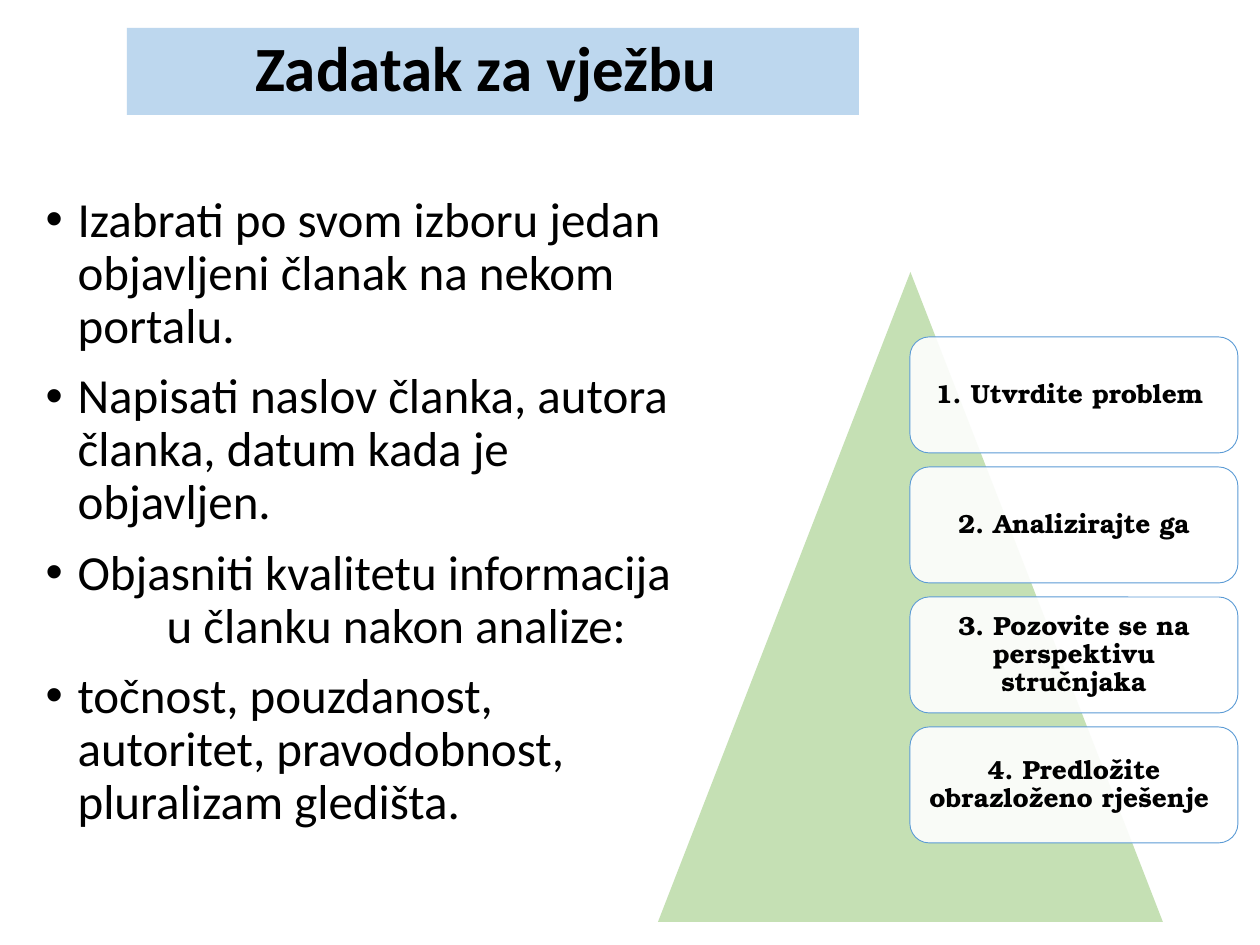
import lxml.etree
import pptx
import pptx.dml.color
import pptx.enum.shapes
import pptx.enum.text
import pptx.oxml
import pptx.oxml.ns
import pptx.util

RGBColor = pptx.dml.color.RGBColor
Shapes = pptx.enum.shapes.MSO_SHAPE
Align = pptx.enum.text.PP_ALIGN
Anchor = pptx.enum.text.MSO_ANCHOR
qn = pptx.oxml.ns.qn

BLACK = RGBColor(0x00, 0x00, 0x00)
WHITE = RGBColor(0xFF, 0xFF, 0xFF)
PALE_BLUE = RGBColor(0xBD, 0xD7, 0xEE)
BLUE = RGBColor(0x5B, 0x9B, 0xD5)
GREEN = RGBColor(0xC5, 0xE0, 0xB4)

TASKS = [
    "Izabrati po svom izboru jedan objavljeni članak na nekom portalu.",
    "Napisati naslov članka, autora članka, datum kada je objavljen.",
    "Objasniti kvalitetu informacija\v\tu članku nakon analize:",
    "točnost, pouzdanost, autoritet, pravodobnost, pluralizam gledišta.",
]
STEPS = [
    "1. Utvrdite problem ",
    "2. Analizirajte ga",
    "3. Pozovite se na perspektivu stručnjaka",
    "4. Predložite obrazloženo rješenje ",
]


def px(length):
    """Turn whole px into EMU."""
    return pptx.util.Emu(round(length * 914400 / 126))


def assign(target, values):
    """Set attributes of an object from a dict."""
    for name, value in values.items():
        setattr(target, name, value)


class SlideBuilder:
    """Hold the text styles and the current slide."""

    title_font = {"name": "Calibri", "size": pptx.util.Pt(36), "bold": True}
    body_font = {"name": "Calibri", "size": pptx.util.Pt(28), "bold": False}
    step_font = {"name": "TeX Gyre Bonum", "size": pptx.util.Pt(15), "bold": True}
    centred = {"alignment": Align.CENTER, "line_spacing": 0.9}
    listed = {"alignment": Align.LEFT, "line_spacing": 0.9}

    def __init__(self, slide):
        self.slide = slide

    def place(self, shape, left, top, width, height):
        """Move and size a shape in px."""
        assign(shape, {"left": px(left), "top": px(top),
                       "width": px(width), "height": px(height)})

    def format(self, paragraph, layout, font):
        """Format a paragraph and its runs."""
        assign(paragraph, layout)
        for run in paragraph.runs:
            assign(run.font, font)
            run.font.color.rgb = BLACK

    def fill(self, shape, color):
        """Give a shape a solid fill."""
        shape.fill.solid()
        shape.fill.fore_color.rgb = color

    def title(self, text, *box):
        """Fill the title placeholder."""
        shape = self.slide.shapes.title
        self.place(shape, *box)
        self.fill(shape, PALE_BLUE)
        frame = shape.text_frame
        frame.text = text
        assign(frame, {"vertical_anchor": Anchor.MIDDLE, "word_wrap": True,
                       "auto_size": pptx.enum.text.MSO_AUTO_SIZE.NONE})
        self.format(frame.paragraphs[0], self.centred, self.title_font)

    def bullets(self, texts, *box):
        """Fill the body placeholder with a bulleted list."""
        shape = self.slide.placeholders[1]
        self.place(shape, *box)
        frame = shape.text_frame
        assign(frame, {"word_wrap": True,
                       "auto_size": pptx.enum.text.MSO_AUTO_SIZE.NONE})
        for index, text in enumerate(texts):
            paragraph = frame.add_paragraph() if index else frame.paragraphs[0]
            paragraph.text = text
            self.bullet(paragraph)
            paragraph.space_before = pptx.util.Pt(10 if index else 0)
            self.format(paragraph, self.listed, self.body_font)

    def bullet(self, paragraph):
        """Add a hanging bullet and a tab stop."""
        properties = paragraph._p.get_or_add_pPr()
        properties.set("marL", str(px(32)))
        properties.set("indent", str(px(-32)))
        lxml.etree.SubElement(properties, qn("a:buFont"), typeface="Arial")
        lxml.etree.SubElement(properties, qn("a:buChar"), char="•")
        tabs = lxml.etree.SubElement(properties, qn("a:tabLst"))
        lxml.etree.SubElement(tabs, qn("a:tab"), pos=str(px(121)), algn="l")

    def shape(self, kind, color, *box):
        """Add a flat preset shape without a line."""
        shape = self.slide.shapes.add_shape(kind, *map(px, box))
        shape.shadow.inherit = False
        self.fill(shape, color)
        shape.line.fill.background()
        return shape

    def step(self, text, *box):
        """Add a translucent rounded card with centred text."""
        card = self.shape(Shapes.ROUNDED_RECTANGLE, WHITE, *box)
        color = card._element.spPr.find(qn("a:solidFill"))[0]
        lxml.etree.SubElement(color, qn("a:alpha"), val="90000")
        card.line.color.rgb = BLUE
        card.line.width = pptx.util.Pt(0.5)
        frame = card.text_frame
        frame.text = text
        assign(frame, {"word_wrap": True, "vertical_anchor": Anchor.MIDDLE})
        assign(frame, {f"margin_{side}": px(8)
                       for side in ("left", "top", "right", "bottom")})
        self.format(frame.paragraphs[0], self.centred, self.step_font)


def main():
    """Build and save the slide."""
    presentation = pptx.Presentation()
    assign(presentation, {"slide_width": px(1260), "slide_height": px(945)})
    slide = presentation.slides.add_slide(presentation.slide_layouts[1])
    builder = SlideBuilder(slide)
    builder.title("Zadatak za vježbu ", 127, 28, 732, 87)
    builder.bullets(TASKS, 33, 189, 667, 708)
    builder.shape(Shapes.ISOSCELES_TRIANGLE, GREEN, 658, 272, 505, 650)
    for index, text in enumerate(STEPS):
        builder.step(text, 910, 337 + 130 * index, 328, 116)
    presentation.save("out.pptx")


if __name__ == "__main__":
    main()
